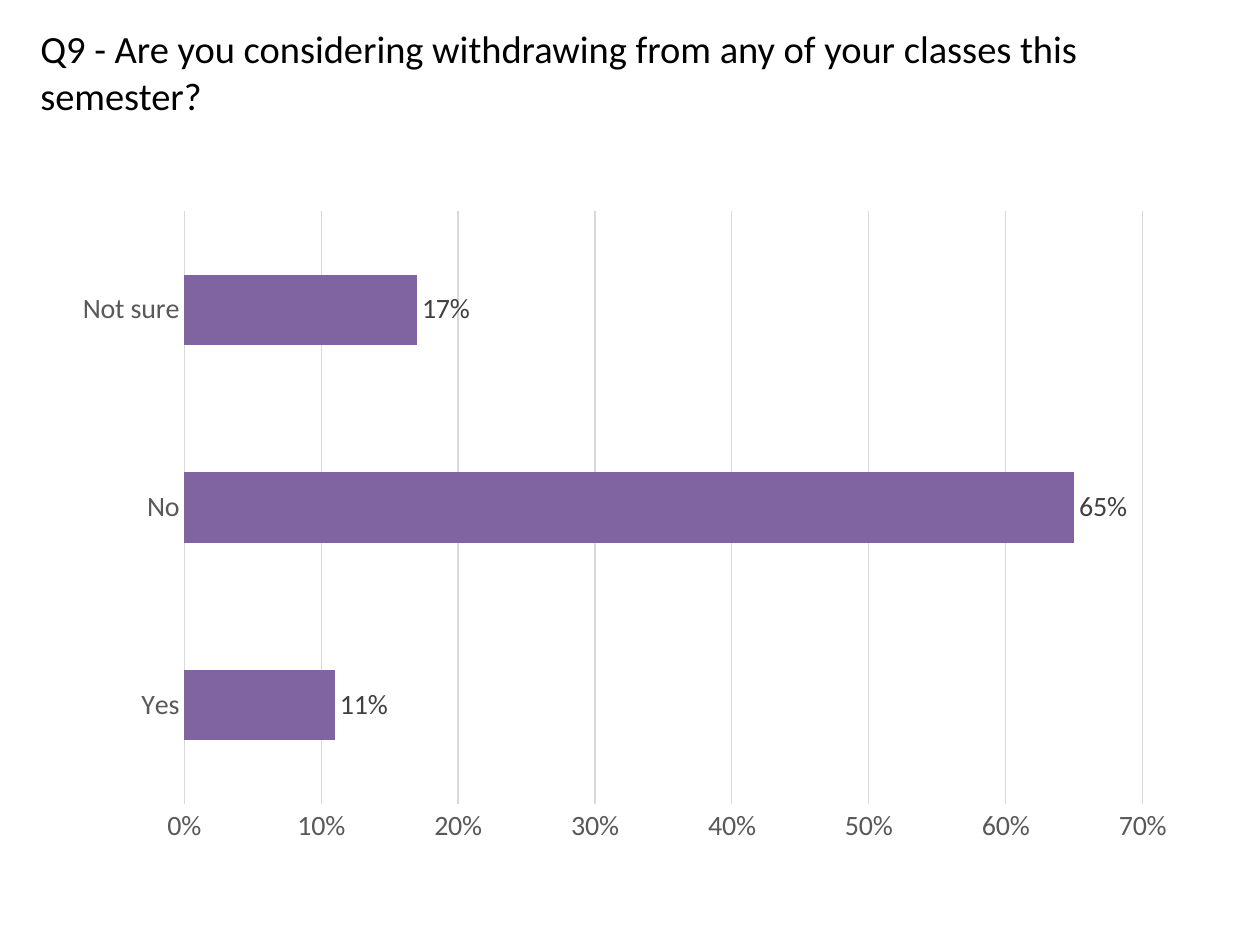
from dataclasses import dataclass

from pptx import Presentation
from pptx.chart.axis import _BaseAxis
from pptx.chart.data import CategoryChartData
from pptx.dml.color import RGBColor
from pptx.enum.chart import XL_CHART_TYPE, XL_LABEL_POSITION, XL_TICK_MARK
from pptx.slide import Slide
from pptx.text.text import Font
from pptx.util import Pt


@dataclass(frozen=True)
class Theme:
    font: str = "Calibri"
    title_size: float = 22
    chart_size: float = 16
    line_width: float = 0.75
    title: str = "000000"
    axis_text: str = "595959"
    label_text: str = "404040"
    grid: str = "D9D9D9"
    bar: str = "8064A2"


@dataclass(frozen=True)
class Box:
    left: float
    top: float
    width: float
    height: float

    def lengths(self) -> tuple[Pt, Pt, Pt, Pt]:
        return Pt(self.left), Pt(self.top), Pt(self.width), Pt(self.height)


@dataclass(frozen=True)
class Answer:
    label: str
    share: float


THEME = Theme()
QUESTION = "Q9 - Are you considering withdrawing from any of your classes this semester?"
ANSWERS = [Answer("Yes", 0.11), Answer("No", 0.65), Answer("Not sure", 0.17)]
TITLE_BOX = Box(16, 11, 648, 29)
CHART_BOX = Box(34.5, 113, 645, 376.5)


def style_font(font: Font, size: float, color: str) -> None:
    font.name = THEME.font
    font.size = Pt(size)
    font.color.rgb = RGBColor.from_string(color)


def style_axis(axis: _BaseAxis) -> None:
    axis.major_tick_mark = XL_TICK_MARK.NONE
    axis.minor_tick_mark = XL_TICK_MARK.NONE
    style_font(axis.tick_labels.font, THEME.chart_size, THEME.axis_text)


def add_question(slide: Slide) -> None:
    text_frame = slide.shapes.add_textbox(*TITLE_BOX.lengths()).text_frame
    text_frame.word_wrap = True
    text_frame.text = QUESTION
    style_font(text_frame.paragraphs[0].runs[0].font, THEME.title_size, THEME.title)


def add_answer_chart(slide: Slide) -> None:
    data = CategoryChartData(number_format="0%")
    data.categories = [answer.label for answer in ANSWERS]
    data.add_series("Series 1", [answer.share for answer in ANSWERS])
    chart = slide.shapes.add_chart(
        XL_CHART_TYPE.BAR_CLUSTERED, *CHART_BOX.lengths(), data
    ).chart
    chart.has_legend = False
    chart.has_title = False
    style_font(chart.font, THEME.chart_size, THEME.title)

    category_axis, value_axis = chart.category_axis, chart.value_axis
    for axis in (category_axis, value_axis):
        style_axis(axis)
    value_axis.minimum_scale = 0
    value_axis.maximum_scale = 0.7
    value_axis.major_unit = 0.1
    value_axis.has_major_gridlines = True
    value_axis.tick_labels.number_format = "0%"
    value_axis.tick_labels.number_format_is_linked = False
    value_axis.format.line.fill.background()
    for line in (category_axis.format.line, value_axis.major_gridlines.format.line):
        line.color.rgb = RGBColor.from_string(THEME.grid)
        line.width = Pt(THEME.line_width)

    plot = chart.plots[0]
    plot.gap_width = 182
    plot.vary_by_categories = False
    series = plot.series[0]
    series.format.fill.solid()
    series.format.fill.fore_color.rgb = RGBColor.from_string(THEME.bar)
    labels = series.data_labels
    labels.show_value = True
    labels.position = XL_LABEL_POSITION.OUTSIDE_END
    labels.number_format = "0%"
    labels.number_format_is_linked = False
    style_font(labels.font, THEME.chart_size, THEME.label_text)


def main() -> None:
    presentation = Presentation()
    presentation.slide_width = Pt(720)
    presentation.slide_height = Pt(540)
    slide = presentation.slides.add_slide(presentation.slide_layouts[6])
    add_question(slide)
    add_answer_chart(slide)
    presentation.save("out.pptx")


if __name__ == "__main__":
    main()
